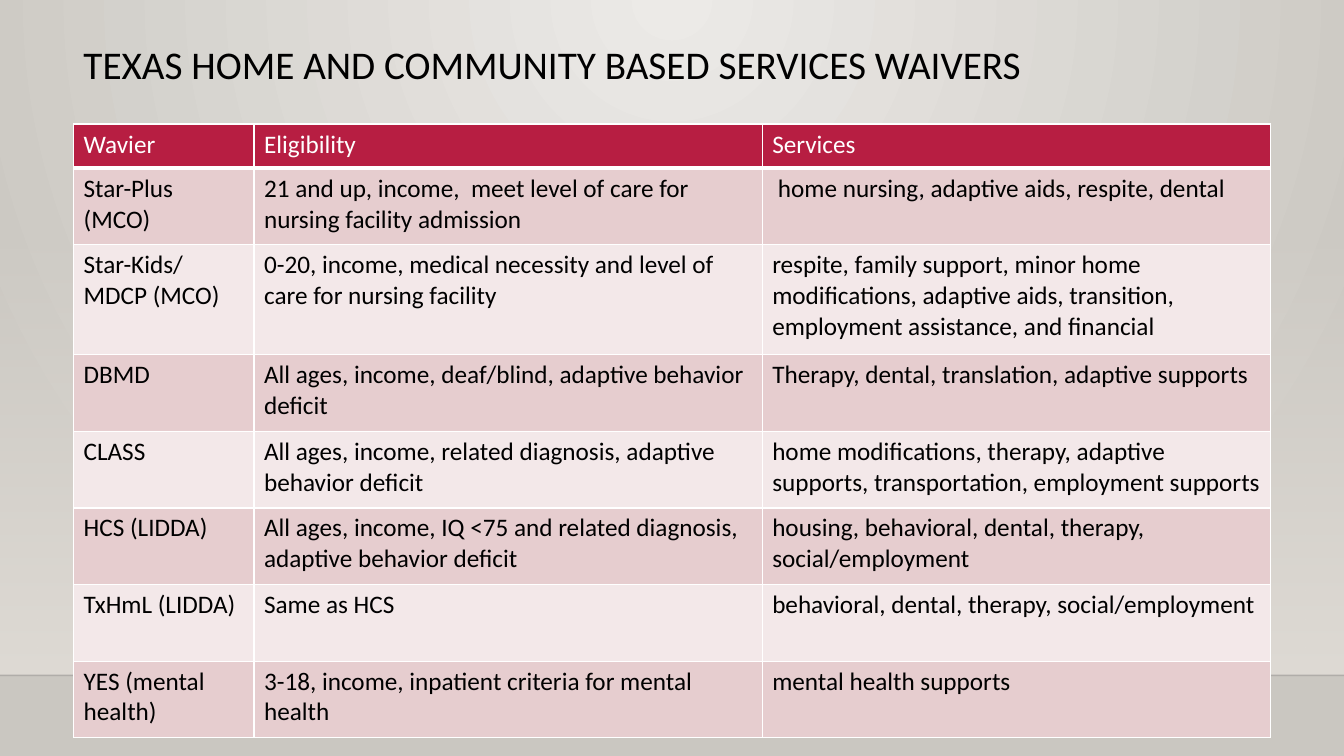
from dataclasses import dataclass

from lxml import etree
from pptx import Presentation
from pptx import util as u
from pptx.dml.color import RGBColor
from pptx.enum import shapes, text
from pptx.oxml import ns

FONT = "Calibri"
BLACK = RGBColor(0x00, 0x00, 0x00)
WHITE = RGBColor(0xFF, 0xFF, 0xFF)
RULE = RGBColor(0x00, 0x00, 0x01)
RED = RGBColor(0xB7, 0x1E, 0x42)
ROSE = RGBColor(0xE6, 0xCD, 0xCF)
BLUSH = RGBColor(0xF3, 0xE8, 0xE9)
LIGHT = RGBColor(0xEC, 0xEA, 0xE7)
STONE = RGBColor(0xCA, 0xC7, 0xC1)
SAND = RGBColor(0xDF, 0xDB, 0xD5)

WIDE, HIGH, FLOOR = 13.33, 7.5, 6.7
LEFT, SPAN = 0.73, 11.87
COLS = (1.79, 5.04, 5.04)


@dataclass
class Waiver:
    name: str
    needs: str
    gives: str
    high: float = 0.76


HEAD = Waiver("Wavier", "Eligibility", "Services", 0.44)
WAIVERS = [
    Waiver("Star-Plus (MCO)",
           "21 and up, income,  meet level of care for nursing facility admission",
           " home nursing, adaptive aids, respite, dental"),
    Waiver("Star-Kids/MDCP (MCO)",
           "0-20, income, medical necessity and level of care for nursing facility",
           "respite, family support, minor home modifications, adaptive aids, "
           "transition, employment assistance, and financial", 1.09),
    Waiver("DBMD",
           "All ages, income, deaf/blind, adaptive behavior deficit",
           "Therapy, dental, translation, adaptive supports"),
    Waiver("CLASS",
           "All ages, income, related diagnosis, adaptive behavior deficit",
           "home modifications, therapy, adaptive supports, transportation, "
           "employment supports"),
    Waiver("HCS (LIDDA)",
           "All ages, income, IQ <75 and related diagnosis, adaptive behavior deficit",
           "housing, behavioral, dental, therapy, social/employment"),
    Waiver("TxHmL (LIDDA)", "Same as HCS",
           "behavioral, dental, therapy, social/employment"),
    Waiver("YES (mental health)",
           "3-18, income, inpatient criteria for mental health",
           "mental health supports"),
]


def node(host, tag: str, **attrs: object):
    """Append a drawing element to host."""
    return etree.SubElement(host, ns.qn(tag), {k: str(v) for k, v in attrs.items()})


def fade(fill, first: RGBColor, last: RGBColor) -> None:
    """Fill with a two-stop gradient running downwards."""
    fill.gradient()
    fill.gradient_angle = 270
    for stop, color in zip(fill.gradient_stops, (first, last)):
        stop.color.rgb = color


def sheer(host, share: int) -> None:
    """Set the opacity, in percent, of the first colour in host."""
    color = next(host.iter(ns.qn("a:srgbClr")))
    node(color, "a:alpha", val=share * 1000)


def write(frame, words: str, size: int, color: RGBColor) -> None:
    """Put one run of text in the frame's first paragraph."""
    run = frame.paragraphs[0].add_run()
    run.text = words
    run.font.name = FONT
    run.font.size = u.Pt(size)
    run.font.color.rgb = color


def edge(cell, base: int) -> None:
    """Draw white borders on a cell, with the bottom one base points wide."""
    props = cell._tc.get_or_add_tcPr()
    for side, width in (("L", 1), ("R", 1), ("T", 1), ("B", base)):
        line = node(props, f"a:ln{side}", w=u.Pt(width))
        node(node(line, "a:solidFill"), "a:srgbClr", val=WHITE)


def backdrop(slide) -> None:
    # Radial background
    fade(slide.background.fill, LIGHT, STONE)
    grad = next(slide._element.iter(ns.qn("a:gradFill")))
    grad.remove(grad.find(ns.qn("a:lin")))
    node(node(grad, "a:path", path="circle"), "a:fillToRect",
         l=43000, t=0, r=43000, b=100000)

    # Wall fading in towards the floor
    wall = slide.shapes.add_shape(
        shapes.MSO_SHAPE.RECTANGLE, 0, u.Inches(2.21),
        u.Inches(WIDE), u.Inches(FLOOR - 2.21))
    wall.shadow.inherit = False
    wall.line.fill.background()
    fade(wall.fill, SAND, SAND)
    sheer(wall._element, 0)

    # Floor line
    line = slide.shapes.add_connector(
        shapes.MSO_CONNECTOR.STRAIGHT, 0, u.Inches(FLOOR),
        u.Inches(WIDE), u.Inches(FLOOR))
    line.line.color.rgb = RULE
    line.line.width = u.Pt(1)
    sheer(line._element, 20)
    node(line._element.spPr, "a:effectLst")


def heading(slide) -> None:
    box = slide.shapes.add_textbox(
        u.Inches(LEFT), u.Inches(0.4), u.Inches(SPAN), u.Inches(1.15))
    frame = box.text_frame
    frame.word_wrap = True
    frame.vertical_anchor = text.MSO_ANCHOR.TOP
    frame.paragraphs[0].line_spacing = 0.9
    write(frame, "TEXAS HOME AND COMMUNITY BASED SERVICES WAIVERS", 28, BLACK)


def grid(slide) -> None:
    rows = [HEAD, *WAIVERS]
    table = slide.shapes.add_table(
        len(rows), len(COLS), u.Inches(LEFT), u.Inches(1.23), u.Inches(SPAN),
        u.Inches(sum(row.high for row in rows))).table
    for col, width in zip(table.columns, COLS):
        col.width = u.Inches(width)
    for i, row in enumerate(rows):
        top = i == 0
        table.rows[i].height = u.Inches(row.high)
        tint = RED if top else (BLUSH, ROSE)[i % 2]
        for j, words in enumerate((row.name, row.needs, row.gives)):
            cell = table.cell(i, j)
            edge(cell, 3 if top else 1)
            cell.fill.solid()
            cell.fill.fore_color.rgb = tint
            write(cell.text_frame, words, 18, WHITE if top else BLACK)
            cell.text_frame.paragraphs[0].runs[0].font.bold = False


def main() -> None:
    deck = Presentation()
    deck.slide_width = u.Inches(WIDE)
    deck.slide_height = u.Inches(HIGH)
    slide = deck.slides.add_slide(deck.slide_layouts[6])
    backdrop(slide)
    heading(slide)
    grid(slide)
    deck.save("out.pptx")


if __name__ == "__main__":
    main()
